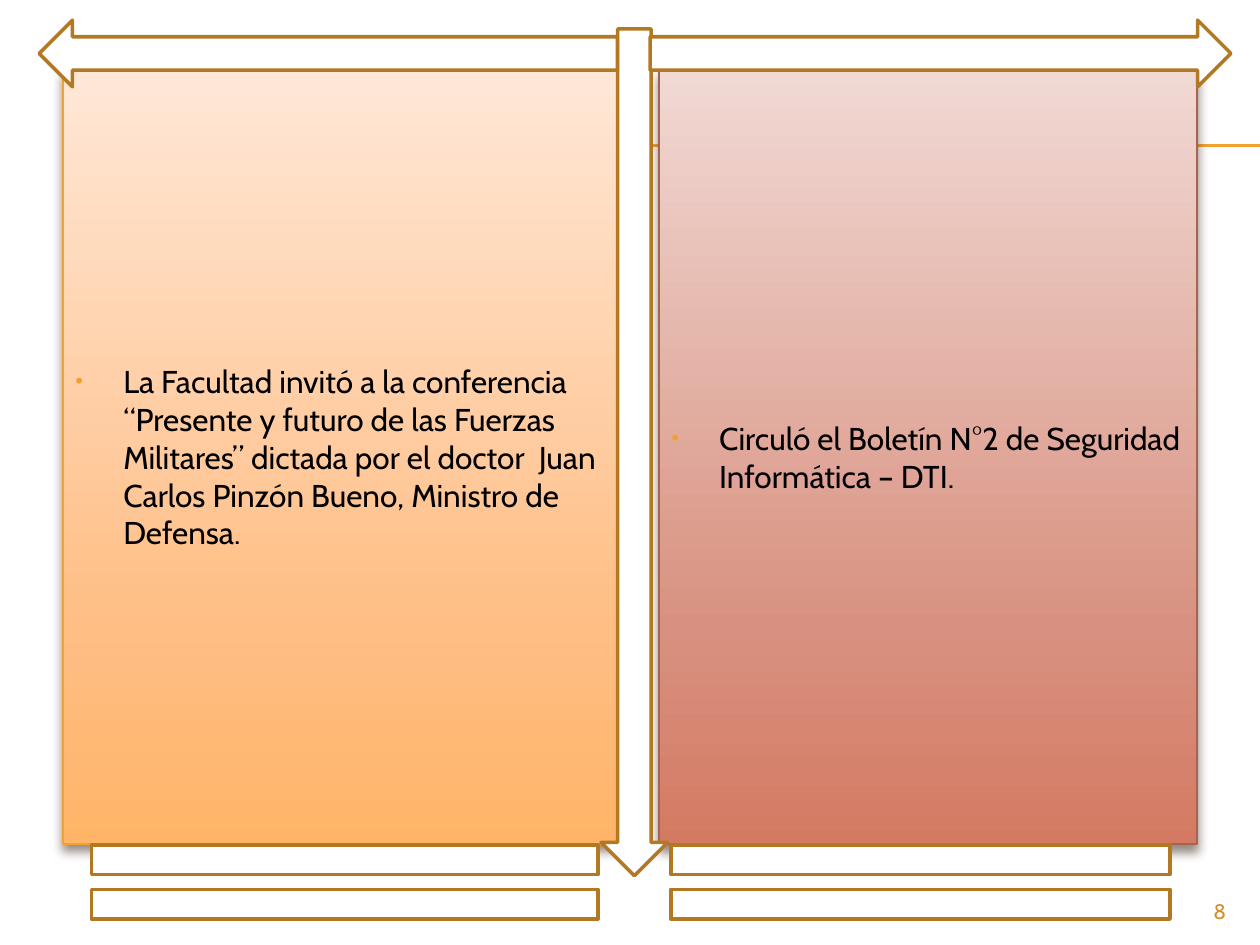
from lxml import etree
from pptx import Presentation
from pptx.dml.color import RGBColor
from pptx.enum import shapes, text
from pptx.oxml.ns import qn
from pptx.util import Inches, Pt

FONT = "Cabin"
COLORS = {
    "ink": "000000", "paper": "FFFFFF", "gold": "F0A22E", "brown": "B27822",
    "brick": "A5644E", "shade": "4E3B30", "number": "D48F29",
}
RULES = [1.15, 1.16]
# left, width, line colour, gradient stops (percent, colour), wording
PANELS = [
    (0.5, 4.42, "gold", [(0, "FFE7D7"), (72, "FFBE84"), (100, "FFB468")],
     "La Facultad invitó a la conferencia “Presente y futuro de las Fuerzas "
     "Militares” dictada por el doctor  Juan Carlos Pinzón Bueno, Ministro de "
     "Defensa."),
    (5.23, 4.27, "brick", [(0, "F1D9D4"), (72, "D89180"), (100, "D47A62")],
     "Circuló el Boletín N°2 de Seguridad Informática – DTI."),
]
FRAME = [
    ("DOWN_ARROW", 4.77, 0.23, 0.53, 6.72),
    ("RIGHT_ARROW", 5.16, 0.16, 4.61, 0.53),
    ("LEFT_ARROW", 0.31, 0.16, 4.59, 0.53),
    ("MATH_EQUAL", 0, 6.5, 5.47, 1),
    ("MATH_EQUAL", 4.61, 6.5, 5.39, 1),
]


def rgb(name):
    return RGBColor.from_string(COLORS[name])


def sub(parent, tag, **attrs):
    node = etree.SubElement(parent, qn(tag))
    for key, value in attrs.items():
        node.set(key, str(value))
    return node


def add_shape(slide, kind, box, line, width):
    shape = slide.shapes.add_shape(
        getattr(shapes.MSO_SHAPE, kind), *map(Inches, box))
    shape.shadow.inherit = False
    shape.line.color.rgb = rgb(line)
    shape.line.width = Pt(width)
    return shape


def add_run(para, words, size, color):
    run = para.add_run()
    run.text = words
    run.font.name = FONT
    run.font.size = Pt(size)
    run.font.color.rgb = rgb(color)


def add_rule(slide, y):
    rule = slide.shapes.add_connector(
        shapes.MSO_CONNECTOR.STRAIGHT,
        Inches(0.56), Inches(y), Inches(10), Inches(y))
    rule.line.color.rgb = rgb("gold")
    rule.line.width = Pt(0.75)
    sub(rule._element.spPr, "a:effectLst")


def shade(shape, stops):
    """Fill from top to bottom and cast a soft shadow downwards."""
    shape.fill.gradient()
    shape.fill.gradient_angle = 270
    props = shape._element.spPr
    ramp = props.find(".//" + qn("a:gsLst"))
    for old in list(ramp):
        ramp.remove(old)
    for pos, color in stops:
        stop = sub(ramp, "a:gs", pos=pos * 1000)
        sub(stop, "a:srgbClr", val=color)
    shadow = sub(props.find(qn("a:effectLst")), "a:outerShdw",
                 blurRad=Pt(6), dist=Pt(4), dir=90 * 60000, rotWithShape=0)
    tint = sub(shadow, "a:srgbClr", val=COLORS["shade"])
    sub(tint, "a:alpha", val=60000)


def add_bullet(para):
    props = para._p.get_or_add_pPr()
    props.set("marL", str(Inches(0.38)))
    props.set("indent", str(Inches(-0.38)))
    sub(sub(props, "a:buClr"), "a:srgbClr", val=COLORS["gold"])
    sub(props, "a:buSzPct", val=70000)
    sub(props, "a:buFont", typeface="Arial")
    sub(props, "a:buChar", char="•")


def add_panel(slide, left, width, line, stops, words):
    panel = add_shape(slide, "RECTANGLE", (left, 0.55, width, 6.15), line, 0.79)
    shade(panel, stops)
    frame = panel.text_frame
    frame.word_wrap = True
    frame.vertical_anchor = text.MSO_ANCHOR.MIDDLE
    para = frame.paragraphs[0]
    para.alignment = text.PP_ALIGN.LEFT
    add_bullet(para)
    add_run(para, words, 18, "ink")


def add_number(slide, number):
    box = slide.shapes.add_textbox(*map(Inches, (9, 7.08, 0.83, 0.27)))
    box.text_frame.word_wrap = True
    para = box.text_frame.paragraphs[0]
    para.alignment = text.PP_ALIGN.RIGHT
    add_run(para, number, 12, "number")


def main():
    deck = Presentation()
    deck.slide_width, deck.slide_height = Inches(10), Inches(7.5)
    slide = deck.slides.add_slide(deck.slide_layouts[6])
    for y in RULES:
        add_rule(slide, y)
    for panel in PANELS:
        add_panel(slide, *panel)
    for kind, *box in FRAME:
        shape = add_shape(slide, kind, box, "brown", 2)
        shape.fill.solid()
        shape.fill.fore_color.rgb = rgb("paper")
    add_number(slide, "8")
    deck.save("out.pptx")


if __name__ == "__main__":
    main()
